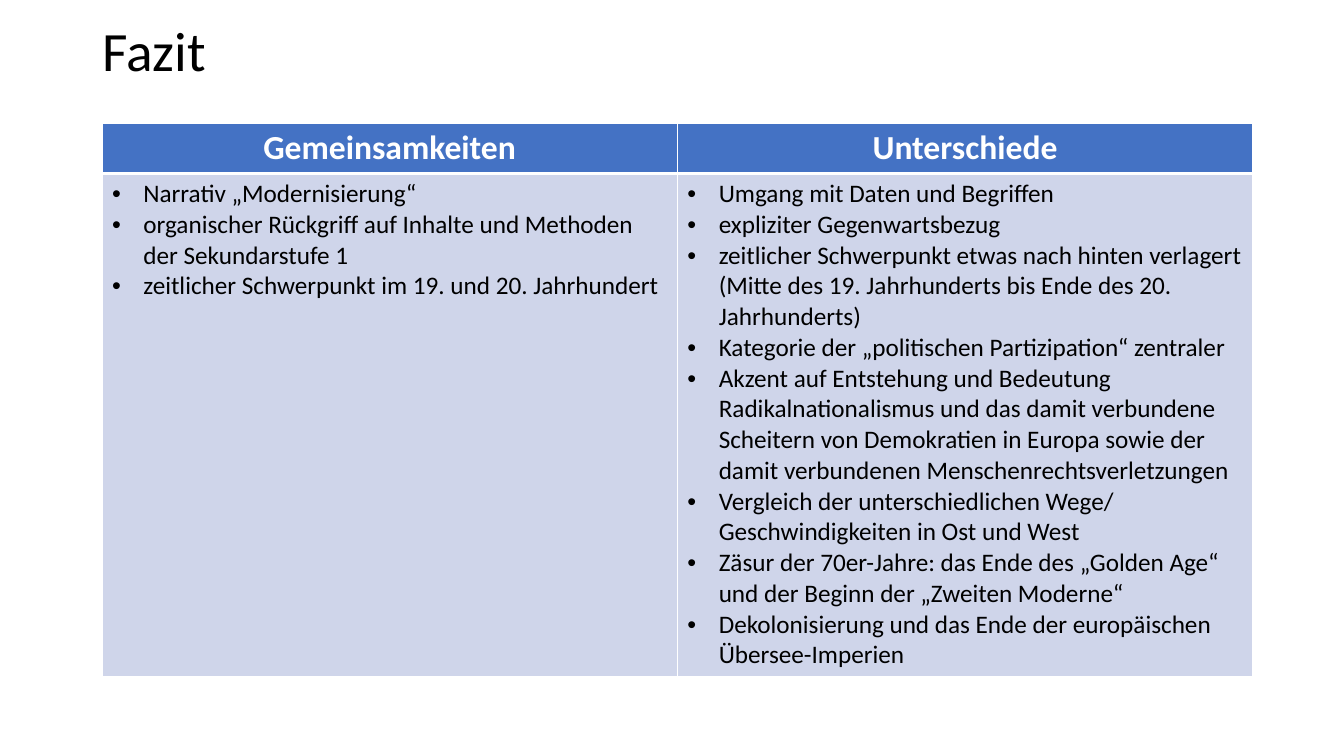
"""Build the slide "Fazit" with a two-column comparison table."""
import pptx
import pptx.dml.color
import pptx.enum.text
import pptx.oxml
import pptx.oxml.ns
import pptx.util
from pptx.util import Cm, Pt

NS = pptx.oxml.ns.nsdecls("a")
COLUMNS = {
    "Gemeinsamkeiten": [
        "Narrativ „Modernisierung“",
        "organischer Rückgriff auf Inhalte und Methoden der Sekundarstufe 1",
        "zeitlicher Schwerpunkt im 19. und 20. Jahrhundert",
    ],
    "Unterschiede": [
        "Umgang mit Daten und Begriffen",
        "expliziter Gegenwartsbezug",
        "zeitlicher Schwerpunkt etwas nach hinten verlagert "
        "(Mitte des 19. Jahrhunderts bis Ende des 20. Jahrhunderts)",
        "Kategorie der „politischen Partizipation“ zentraler",
        "Akzent auf Entstehung und Bedeutung Radikalnationalismus und das damit "
        "verbundene Scheitern von Demokratien in Europa sowie der damit "
        "verbundenen Menschenrechtsverletzungen",
        "Vergleich der unterschiedlichen Wege/ Geschwindigkeiten in Ost und West",
        "Zäsur der 70er-Jahre: das Ende des „Golden Age“ und der Beginn der "
        "„Zweiten Moderne“",
        "Dekolonisierung und das Ende der europäischen Übersee-Imperien",
    ],
}


def color(hex_value):
    return pptx.dml.color.RGBColor.from_string(hex_value)


def add_run(p, text, size, hex_value, bold=False):
    r = p.add_run()
    r.text = text
    r.font.name = "Calibri"
    r.font.size = Pt(size)
    r.font.bold = bold
    r.font.color.rgb = color(hex_value)


prs = pptx.Presentation()
prs.slide_width, prs.slide_height = Cm(33.87), Cm(19.05)
s = prs.slides.add_slide(prs.slide_layouts[6])

tf = s.shapes.add_textbox(Cm(2.33), Cm(0.56), Cm(29.21), Cm(1.57)).text_frame
tf.word_wrap = True
tf.vertical_anchor = pptx.enum.text.MSO_ANCHOR.MIDDLE
p = tf.paragraphs[0]
p.line_spacing = 0.9
add_run(p, "Fazit", 39.6, "000000")

table = s.shapes.add_table(2, 2, Cm(2.57), Cm(3.1), Cm(29), Cm(13.95)).table
table.rows[0].height, table.rows[1].height = Cm(1.27), Cm(12.68)

for col, (heading, points) in enumerate(COLUMNS.items()):
    table.columns[col].width = Cm(14.5)
    head, body = table.cell(0, col), table.cell(1, col)

    p = head.text_frame.paragraphs[0]
    p.alignment = pptx.enum.text.PP_ALIGN.CENTER
    add_run(p, heading, 24, "FFFFFF", True)

    tf = body.text_frame
    for i, point in enumerate(points):
        p = tf.paragraphs[0] if i == 0 else tf.add_paragraph()
        pPr = p._p.get_or_add_pPr()
        pPr.set("marL", str(Cm(0.79)))
        pPr.set("indent", str(-Cm(0.79)))
        pPr.append(pptx.oxml.parse_xml(f'<a:buFont {NS} typeface="Arial"/>'))
        pPr.append(pptx.oxml.parse_xml(f'<a:buChar {NS} char="•"/>'))
        add_run(p, point, 18, "000000")

    for cell, fill, bottom in ((head, "4472C4", 3), (body, "CFD5EA", 1)):
        cell.fill.solid()
        cell.fill.fore_color.rgb = color(fill)
        top = 1 if cell is head else 3
        for i, (side, width) in enumerate(zip("LRTB", (1, 1, top, bottom))):
            cell._tc.get_or_add_tcPr().insert(i, pptx.oxml.parse_xml(
                f'<a:ln{side} {NS} w="{Pt(width)}"><a:solidFill>'
                f'<a:srgbClr val="FFFFFF"/></a:solidFill></a:ln{side}>'))

prs.save("out.pptx")
